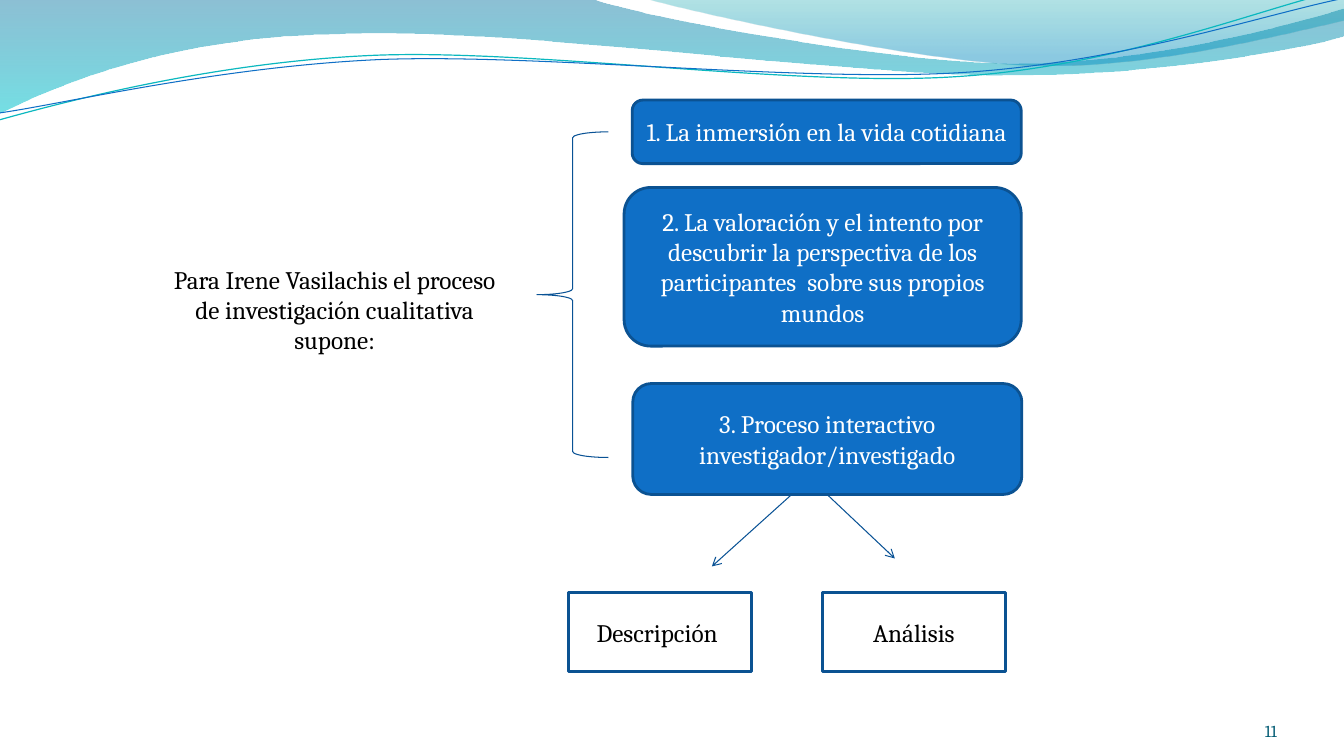
from lxml import etree
from pptx import Presentation
from pptx.dml.color import RGBColor
from pptx.enum.shapes import MSO_CONNECTOR, MSO_SHAPE
from pptx.enum.text import MSO_ANCHOR, MSO_AUTO_SIZE, PP_ALIGN
from pptx.oxml.ns import qn
from pptx.util import Pt

ROUNDED, RECT, BRACE = MSO_SHAPE.ROUNDED_RECTANGLE, MSO_SHAPE.RECTANGLE, MSO_SHAPE.LEFT_BRACE
STRAIGHT = MSO_CONNECTOR.STRAIGHT
TOP, MIDDLE, BOTTOM = MSO_ANCHOR.TOP, MSO_ANCHOR.MIDDLE, MSO_ANCHOR.BOTTOM
CENTER, RIGHT = PP_ALIGN.CENTER, PP_ALIGN.RIGHT
GROW = MSO_AUTO_SIZE.SHAPE_TO_FIT_TEXT

THEME = {
    "font": "Cambria", "body": 18, "small": 12,
    "blue": "0F6FC6", "border": "0B5292", "thin": "095295",
    "white": "FFFFFF", "black": "000000", "number": "045D75",
    "border_width": 2, "thin_width": 0.75,
}

# Content: text and (left, top, width, height) in points
PREMISE = ("Para Irene Vasilachis el proceso de investigación cualitativa supone:",
           (111.6, 185, 254.9, 72.7))
STEPS = [
    ("1. La inmersión en la vida cotidiana", (451.6, 71.5, 277.9, 45.4)),
    ("2. La valoración y el intento por descubrir la perspectiva de los "
     "participantes  sobre sus propios mundos", (445.8, 133.9, 283.7, 113.3)),
    ("3. Proceso interactivo investigador/investigado", (452, 274, 277.9, 79.2)),
]
OUTCOMES = ["Descripción ", "Análisis"]
OUTCOME_LEFT, OUTCOME_TOP, OUTCOME_STEP = 406.1, 423.3, 181.4
OUTCOME_SIZE = (130.6, 56.6)
STEPS_BRACE = (383.5, 94.2, 51.1, 232.6)
ARROWS = [(565.2, 353.5, 508.5, 404.6), (591.1, 353.5, 639.2, 398.9)]
PAGE_NUMBER = ("11", (832.2, 500.4, 79.9, 28.8))

# Header waves: a start point, then segments of one point (line) or three (curve)
# Gradient stops: (position, colour, opacity in percent)
WAVES = [
    {"points": [(0, 0), [(422.6, -0.7)],
                [(456.5, 12.2), (637.2, 45.4), (727.9, 45.4)],
                [(819.4, 45.4), (920.2, 18.7), (959.8, 6.5)], [(961.2, 25.9)],
                [(943.9, 31.7), (835.2, 54.7), (715.7, 54)],
                [(596.9, 54), (366.5, 20.2), (247, 24.5)],
                [(123.1, 25.9), (43.9, 59.8), (-0.7, 81.4)]],
     "stops": [(0, "0074A1", 45), (1, "00C6CF", 55)]},
    {"points": [(460.1, -0.7),
                [(488.9, 7.9), (654.5, 44.6), (738, 46.8)],
                [(821.5, 49.7), (923, 23), (959.8, 15.1)], [(959.8, 0)]],
     "stops": [(0, "00A1A9", 30), (0.8, "008BBF", 45)]},
    {"points": [(-0.7, 85.7),
                [(46.1, 72.7), (151.9, 44.6), (265.7, 39.6)],
                [(379.4, 34.6), (568.8, 62.6), (684, 54.7)],
                [(799.2, 47.5), (901.4, 5.8), (958.3, -7.2)]],
     "line": ("0AB8BF", 0.85)},
    {"points": [(0, 80.6),
                [(45.4, 74.2), (157, 47.5), (272.2, 42.5)],
                [(386.6, 38.2), (572.4, 59), (687.6, 51.8)],
                [(802.8, 44.6), (903.6, 10.1), (960.5, -1.4)]],
     "line": ("0F6FC6", 0.75)},
]
UNITS_PER_POINT = 100


def rgb(colour):
    return RGBColor.from_string(colour)


def set_line(item, colour, width):
    item.line.color.rgb = rgb(colour)
    item.line.width = Pt(width)


def write(item, text, colour, size=THEME["body"], align=CENTER, **frame_format):
    frame = item.text_frame
    for name, value in {"word_wrap": True, "vertical_anchor": MIDDLE, **frame_format}.items():
        setattr(frame, name, value)
    paragraph = frame.paragraphs[0]
    paragraph.alignment = align
    run = paragraph.add_run()
    run.text = text
    for name, value in {"name": THEME["font"], "size": Pt(size)}.items():
        setattr(run.font, name, value)
    run.font.color.rgb = rgb(colour)


def add_box(slide, kind, place, text, fill, colour):
    box = slide.shapes.add_shape(kind, *map(Pt, place))
    box.shadow.inherit = False
    box.fill.solid()
    box.fill.fore_color.rgb = rgb(fill)
    set_line(box, THEME["border"], THEME["border_width"])
    write(box, text, colour)


def add_label(slide, content, *style, **frame_format):
    text, place = content
    label = slide.shapes.add_textbox(*map(Pt, place))
    write(label, text, *style, **frame_format)


def bend(wave, segments):
    """Join the three line steps of each curved segment into one cubic curve."""
    steps = iter(list(wave.element.spPr.iter(qn("a:lnTo"))))
    for segment in segments:
        nodes = [next(steps) for _ in segment]
        if len(nodes) == 3:
            curve = etree.Element(qn("a:cubicBezTo"))
            nodes[0].addprevious(curve)
            for node in nodes:
                curve.append(node[0])
                node.getparent().remove(node)


def add_wave(slide, points, stops=None, line=None):
    start, *segments = points
    outline = [(x * UNITS_PER_POINT, y * UNITS_PER_POINT)
               for x, y in [start, *sum(segments, [])]]
    builder = slide.shapes.build_freeform(*outline[0], scale=Pt(1) / UNITS_PER_POINT)
    builder.add_line_segments(outline[1:], close=stops is not None)
    wave = builder.convert_to_shape()
    bend(wave, segments)
    wave.shadow.inherit = False
    if line:
        wave.fill.background()
        set_line(wave, *line)
        return
    wave.line.fill.background()
    wave.fill.gradient()
    wave.fill.gradient_angle = 270
    for stop, (position, colour, _) in zip(wave.fill.gradient_stops, stops):
        stop.position = position
        stop.color.rgb = rgb(colour)
    gradient = wave.element.spPr.find(qn("a:gradFill"))
    for colour_node, (_, _, opacity) in zip(gradient.iter(qn("a:srgbClr")), stops):
        etree.SubElement(colour_node, qn("a:alpha"), val=str(opacity * 1000))


def add_arrow(slide, ends):
    arrow = slide.shapes.add_connector(STRAIGHT, *map(Pt, ends))
    set_line(arrow, THEME["thin"], THEME["thin_width"])
    line_node = arrow.element.spPr.find(qn("a:ln"))
    etree.SubElement(line_node, qn("a:tailEnd"), type="arrow")
    etree.SubElement(arrow.element.spPr, qn("a:effectLst"))


def main():
    deck = Presentation()
    deck.slide_width, deck.slide_height = Pt(960), Pt(540)
    slide = deck.slides.add_slide(deck.slide_layouts[6])

    # Header waves and page number
    for wave in WAVES:
        add_wave(slide, **wave)
    add_label(slide, PAGE_NUMBER, THEME["number"], THEME["small"], RIGHT,
              vertical_anchor=BOTTOM, margin_left=0, margin_top=0,
              margin_right=0, margin_bottom=0)

    # Steps of the process and their outcomes
    for text, place in STEPS:
        add_box(slide, ROUNDED, place, text, THEME["blue"], THEME["white"])
    for index, text in enumerate(OUTCOMES):
        place = (OUTCOME_LEFT + index * OUTCOME_STEP, OUTCOME_TOP, *OUTCOME_SIZE)
        add_box(slide, RECT, place, text, THEME["white"], THEME["black"])
    for ends in ARROWS:
        add_arrow(slide, ends)

    # Premise and the brace that opens to the steps
    brace = slide.shapes.add_shape(BRACE, *map(Pt, STEPS_BRACE))
    brace.shadow.inherit = False
    brace.fill.background()
    set_line(brace, THEME["thin"], THEME["thin_width"])
    add_label(slide, PREMISE, THEME["black"], vertical_anchor=TOP, auto_size=GROW)

    deck.save("out.pptx")


if __name__ == "__main__":
    main()
